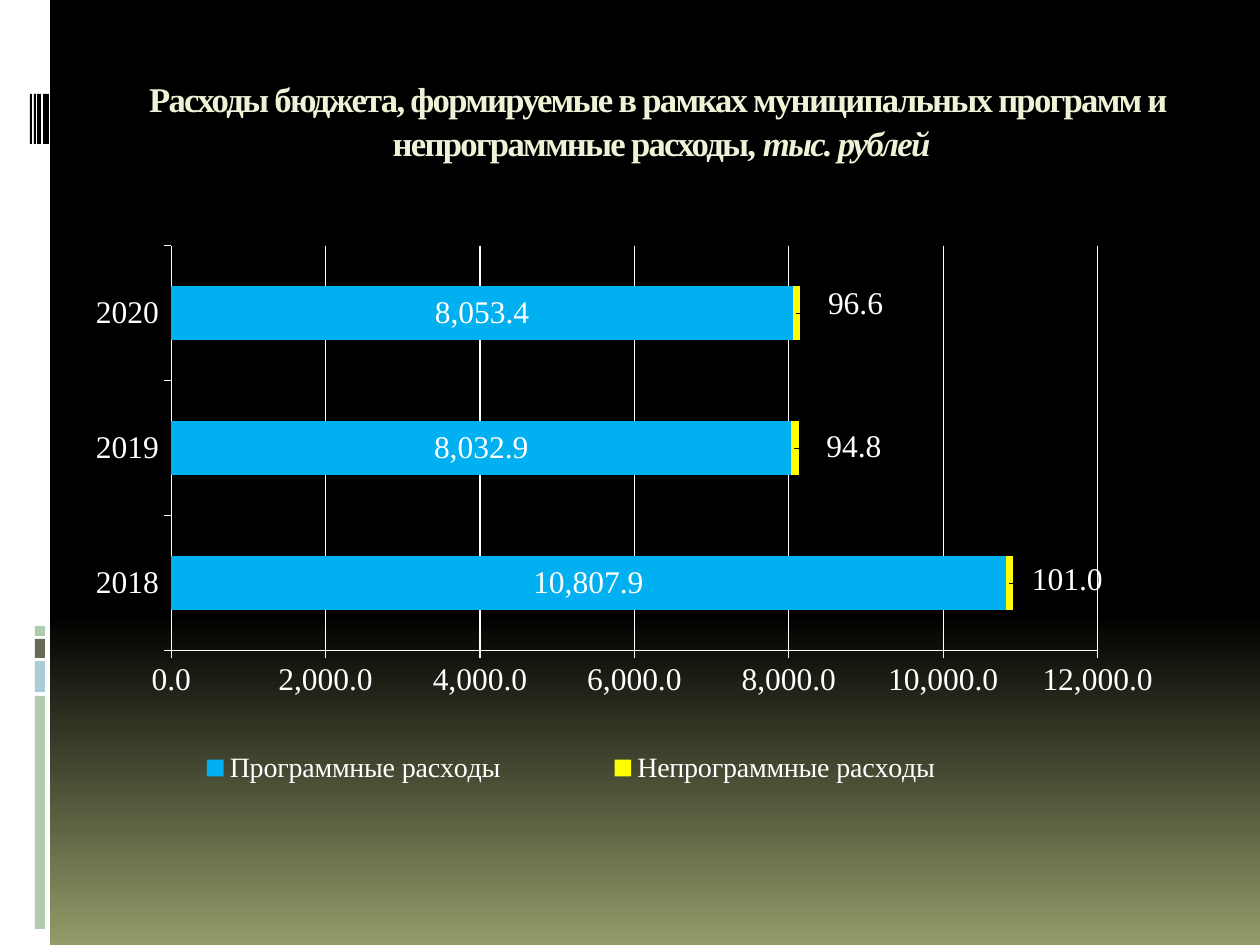
from lxml import etree
from pptx import Presentation
from pptx.chart.data import CategoryChartData
from pptx.dml.color import RGBColor
from pptx.enum.chart import XL_CHART_TYPE, XL_LEGEND_POSITION, XL_TICK_MARK
from pptx.enum.shapes import MSO_SHAPE
from pptx.enum.text import MSO_ANCHOR, PP_ALIGN
from pptx.oxml.ns import qn
from pptx.util import Emu, Pt

BAR_STACKED = XL_CHART_TYPE.BAR_STACKED
LEGEND_RIGHT = XL_LEGEND_POSITION.RIGHT
TICK_OUTSIDE = XL_TICK_MARK.OUTSIDE
RECT = MSO_SHAPE.RECTANGLE
TOP = MSO_ANCHOR.TOP
CENTER = PP_ALIGN.CENTER

SERIF = "Times New Roman"
WHITE = "FFFFFF"
BLACK = "000000"
FORMAT = "#,##0.0"

TITLE = [
    ("Расходы бюджета, формируемые в рамках муниципальных программ и ", False),
    ("\n", False),
    ("непрограммные расходы, ", False),
    ("тыс. рублей", True),
]
TITLE_BOX = (126, 70, 1071, 126)
SIDE_BARS = [
    (0, 0, 50, 945, WHITE),
    (35, 696, 10, 233, "B0CCB0"),
    (35, 661, 10, 31, "A8CDD7"),
    (35, 639, 10, 19, "676A55"),
    (35, 626, 10, 10, "B0CCB0"),
    (43, 94, 6, 50, BLACK),
    (37, 94, 4, 50, BLACK),
    (34, 94, 2, 50, BLACK),
    (30, 94, 2, 50, BLACK),
]
CHART_BOX = (59, 227, 1134, 624)
YEARS = ["2018", "2019", "2020"]
SERIES = [
    ("Программные расходы", [10807.9, 8032.9, 8053.4], "00B0F0"),
    ("Непрограммные расходы", [101.0, 94.8, 96.6], "FFFF00"),
]
LABEL_SHIFTS = [(58, -3), (59, -1), (59, -9)]
PLOT_BOX = (112, 19, 926, 405)
LEGEND_BOX = (43, 516, 938, 50)


def px(n):
    return Emu(round(n * 914400 / 126))


def rgb(value):
    return RGBColor.from_string(value)


def style(font, size, color=WHITE, name=SERIF, bold=False, italic=False):
    font.size = Pt(size)
    font.color.rgb = rgb(color)
    font.name = name
    font.bold = bold
    font.italic = italic


def add_text(p, text, spacing=0, **fmt):
    if text == "\n":
        p.add_line_break()
        return
    r = p.add_run()
    r.text = text
    style(r.font, **fmt)
    r.font._element.set("spc", str(spacing))


def layout_xml(box, inner=False, shift=False):
    layout = etree.Element(qn("c:layout"))
    manual = etree.SubElement(layout, qn("c:manualLayout"))
    items = [("layoutTarget", "inner")] if inner else []
    if not shift:
        items += [("xMode", "edge"), ("yMode", "edge")]
    sizes = CHART_BOX[2:] * 2
    items += [(k, f"{v / size:.3f}") for k, v, size in zip("xywh", box, sizes)]
    for tag, value in items:
        etree.SubElement(manual, qn("c:" + tag)).set("val", value)
    return layout


def place(parent, layout, index):
    for old in parent.findall(qn("c:layout")):
        parent.remove(old)
    parent.insert(index, layout)


def add_chart(s):
    data = CategoryChartData(number_format=FORMAT)
    data.categories = YEARS
    for name, values, _ in SERIES:
        data.add_series(name, values)
    chart = s.shapes.add_chart(BAR_STACKED, *map(px, CHART_BOX), data).chart
    chart.has_title = False
    style(chart.font, 18, name="Calibri")

    plot = chart.plots[0]
    plot.gap_width = 150
    plot.overlap = 100
    plot.vary_by_categories = False
    for series, (_, _, color) in zip(plot.series, SERIES):
        series.format.fill.solid()
        series.format.fill.fore_color.rgb = rgb(color)
        labels = series.data_labels
        labels.show_value = True
        labels.number_format = FORMAT
        labels.number_format_is_linked = False
        style(labels.font, 18)

    for i, shift in enumerate(LABEL_SHIFTS):
        label = plot.series[1].points[i].data_label
        style(label.font, 18)
        place(label._get_or_add_dLbl(), layout_xml(shift, shift=True), 1)

    for axis in (chart.category_axis, chart.value_axis):
        style(axis.tick_labels.font, 18)
        axis.major_tick_mark = TICK_OUTSIDE
        axis.format.line.color.rgb = rgb(WHITE)
        axis.format.line.width = Pt(0.75)
    axis = chart.value_axis
    axis.minimum_scale, axis.maximum_scale, axis.major_unit = 0, 12000, 2000
    axis.tick_labels.number_format = FORMAT
    axis.tick_labels.number_format_is_linked = False
    axis.has_major_gridlines = True
    axis.major_gridlines.format.line.color.rgb = rgb(WHITE)
    axis.major_gridlines.format.line.width = Pt(0.75)

    chart.has_legend = True
    legend = chart.legend
    legend.position = LEGEND_RIGHT
    legend.include_in_layout = False
    style(legend.font, 16)
    place(legend._element, layout_xml(LEGEND_BOX), 1)
    area = chart._chartSpace.find(".//" + qn("c:plotArea"))
    place(area, layout_xml(PLOT_BOX, inner=True), 0)


def main():
    prs = Presentation()
    prs.slide_width, prs.slide_height = px(1260), px(945)
    s = prs.slides.add_slide(prs.slide_layouts[6])

    fill = s.background.fill
    fill.gradient()
    fill.gradient_angle = 270
    for stop, (pos, color) in zip(fill.gradient_stops, [(0.65, BLACK), (1, "939B69")]):
        stop.position = pos
        stop.color.rgb = rgb(color)

    for *box, color in SIDE_BARS:
        sp = s.shapes.add_shape(RECT, *map(px, box))
        sp.shadow.inherit = False
        sp.fill.solid()
        sp.fill.fore_color.rgb = rgb(color)
        sp.line.fill.background()

    tf = s.shapes.add_textbox(*map(px, TITLE_BOX)).text_frame
    tf.word_wrap = True
    tf.vertical_anchor = TOP
    p = tf.paragraphs[0]
    p.alignment = CENTER
    p.line_spacing = 1.05
    for text, italic in TITLE:
        add_text(p, text, spacing=-100, size=19.8, color="F0F2D7", bold=True, italic=italic)

    add_chart(s)
    prs.save("out.pptx")


if __name__ == "__main__":
    main()
